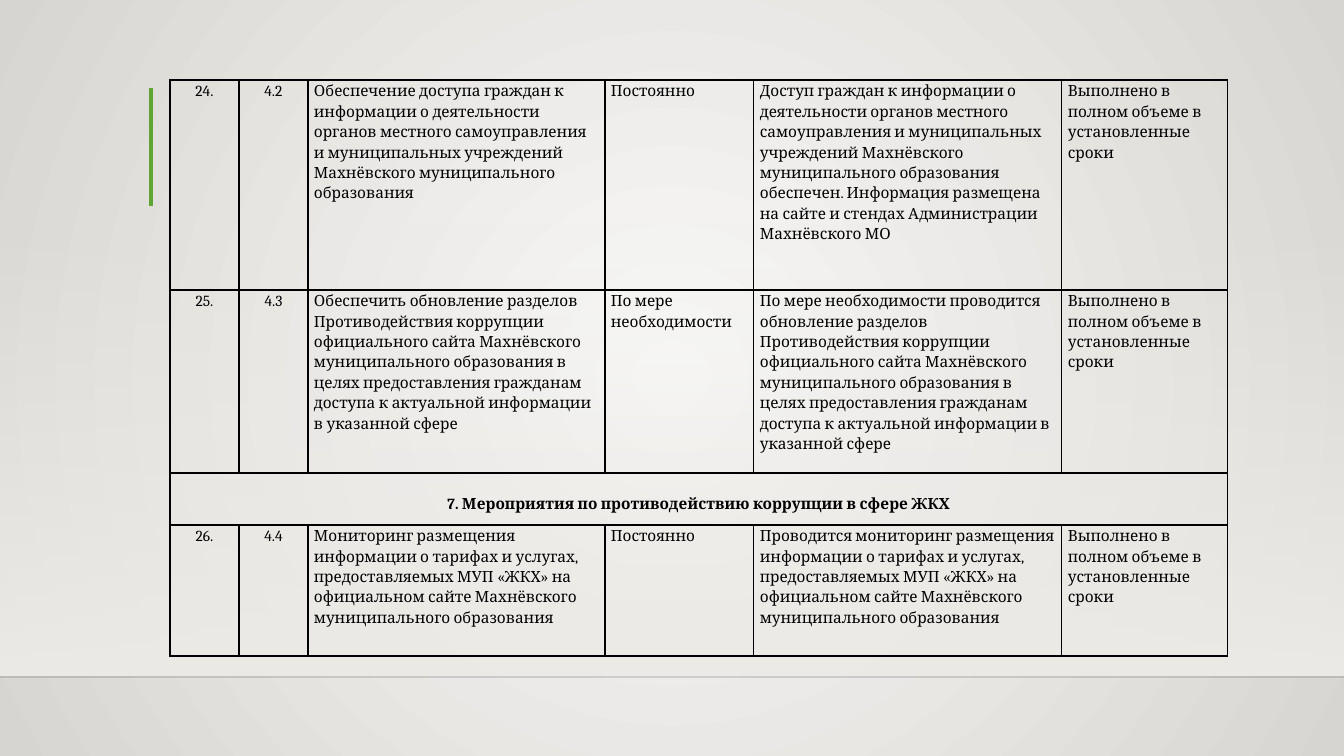
from pptx import Presentation
from pptx.dml.color import RGBColor
from pptx.enum.shapes import MSO_CONNECTOR as Connector, MSO_SHAPE as Shape
from pptx.enum.text import PP_ALIGN as Align
from pptx.oxml import parse_xml
from pptx.oxml.ns import nsdecls, qn
from pptx.util import Emu, Pt

WIDTH, HEIGHT = 1344, 756
BLACK = RGBColor(0x00, 0x00, 0x00)
HORIZON = RGBColor(0x00, 0x00, 0x01)
GREEN = RGBColor(0x5F, 0xA5, 0x34)
GLOW = RGBColor(0xFA, 0xFA, 0xF9)
EDGE = RGBColor(0xD7, 0xD5, 0xD2)
WALL = RGBColor(0xED, 0xEB, 0xE7)

COLUMNS = [69, 69, 297, 149, 308, 166]
ROWS = [210, 183, 52, 131]
DONE = "Выполнено в полном объеме в установленные сроки"
MEASURES = [
    ["24.", "4.2",
     "Обеспечение доступа граждан к информации о деятельности органов местного "
     "самоуправления и муниципальных учреждений Махнёвского муниципального образования",
     "Постоянно",
     "Доступ граждан к информации о деятельности органов местного самоуправления и "
     "муниципальных учреждений Махнёвского муниципального образования обеспечен. "
     "Информация размещена на сайте и стендах Администрации Махнёвского МО", DONE],
    ["25.", "4.3",
     "Обеспечить обновление разделов Противодействия коррупции официального сайта "
     "Махнёвского муниципального образования в целях предоставления гражданам доступа "
     "к актуальной информации в указанной сфере",
     "По мере необходимости",
     "По мере необходимости проводится обновление разделов Противодействия коррупции "
     "официального сайта Махнёвского муниципального образования в целях предоставления "
     "гражданам доступа к актуальной информации в указанной сфере", DONE],
    ["7. Мероприятия по противодействию коррупции в сфере ЖКХ"],
    ["26.", "4.4",
     "Мониторинг размещения информации о тарифах и услугах, предоставляемых МУП «ЖКХ» "
     "на официальном сайте Махнёвского муниципального образования",
     "Постоянно",
     "Проводится мониторинг размещения информации о тарифах и услугах, предоставляемых "
     "МУП «ЖКХ» на официальном сайте Махнёвского муниципального образования", DONE],
]


def px(length):
    """Turn slide pixels into EMU."""
    return Emu(round(length * 914400 / 100.8))


def set_alpha(color, percent):
    """Make an srgbClr element partly transparent."""
    color.append(parse_xml(f'<a:alpha {nsdecls("a")} val="{percent * 1000}"/>'))


def set_gradient(fill, start, end):
    """Fill with a two-stop gradient running downwards."""
    fill.gradient()
    fill.gradient_angle = 270
    for stop, color in zip(fill.gradient_stops, (start, end)):
        stop.color.rgb = color


def paint_background(slide):
    """Give the slide a round glow from its centre."""
    set_gradient(slide.background.fill, GLOW, EDGE)
    linear = next(slide.element.iter(qn("a:lin")))
    linear.getparent().replace(linear, parse_xml(
        f'<a:path {nsdecls("a")} path="circle">'
        '<a:fillToRect l="50000" t="50000" r="50000" b="50000"/></a:path>'))


def add_wall(slide, top, height):
    """Add a full-width band that fades in from above."""
    wall = slide.shapes.add_shape(Shape.RECTANGLE, 0, px(top), px(WIDTH), px(height))
    wall.shadow.inherit = False
    wall.line.fill.background()
    set_gradient(wall.fill, WALL, WALL)
    set_alpha(next(wall.element.iter(qn("a:srgbClr"))), 0)


def add_rule(slide, start, end, color, weight, opacity=100):
    """Add a straight line between two points."""
    rule = slide.shapes.add_connector(Connector.STRAIGHT, *map(px, start + end))
    rule.line.color.rgb = color
    rule.line.width = Pt(weight)
    if opacity < 100:
        set_alpha(next(rule.element.iter(qn("a:srgbClr"))), opacity)
    rule.element.spPr.append(parse_xml(f'<a:effectLst {nsdecls("a")}/>'))


def format_cell(cell):
    """Clear the fill, set the margins and draw black borders."""
    margins = {"margin_left": 6, "margin_right": 6, "margin_top": 0, "margin_bottom": 0}
    for side, margin in margins.items():
        setattr(cell, side, px(margin))
    cell.fill.background()
    properties = cell._tc.get_or_add_tcPr()
    for position, side in enumerate(("lnL", "lnR", "lnT", "lnB")):
        properties.insert(position, parse_xml(
            f'<a:{side} {nsdecls("a")} w="{Pt(1)}"><a:solidFill>'
            f'<a:srgbClr val="{BLACK}"/></a:solidFill></a:{side}>'))


def write_cell(cell, text, centered, bold):
    """Write one paragraph of table text."""
    paragraph = cell.text_frame.paragraphs[0]
    paragraph.alignment = Align.CENTER if centered else Align.LEFT
    paragraph.line_spacing = 1.15
    run = paragraph.add_run()
    run.text = text
    for name, value in {"name": "Cambria", "size": Pt(11), "bold": bold}.items():
        setattr(run.font, name, value)
    run.font.color.rgb = BLACK


def add_measures(slide, left, top):
    """Add the table of measures, merging rows that hold a heading."""
    table = slide.shapes.add_table(len(ROWS), len(COLUMNS), px(left), px(top),
                                   px(sum(COLUMNS)), px(sum(ROWS))).table
    table.first_row = table.horz_banding = False
    for column, width in zip(table.columns, COLUMNS):
        column.width = px(width)
    for row, height, texts in zip(table.rows, ROWS, MEASURES):
        row.height = px(height)
        for cell in row.cells:
            format_cell(cell)
        heading = len(texts) == 1
        if heading:
            row.cells[0].merge(row.cells[len(COLUMNS) - 1])
            row.cells[0].margin_top = px(20)
        for index, text in enumerate(texts):
            write_cell(row.cells[index], text, index < 2, heading)


def main():
    """Build and save the slide."""
    deck = Presentation()
    deck.slide_width, deck.slide_height = px(WIDTH), px(HEIGHT)
    slide = deck.slides.add_slide(deck.slide_layouts[6])
    paint_background(slide)
    add_wall(slide, 222, 454)
    add_rule(slide, (0, 677), (WIDTH, 677), HORIZON, 1, 20)
    add_rule(slide, (151, 88), (151, 206), GREEN, 3)
    add_measures(slide, 170, 80)
    deck.save("out.pptx")


if __name__ == "__main__":
    main()
